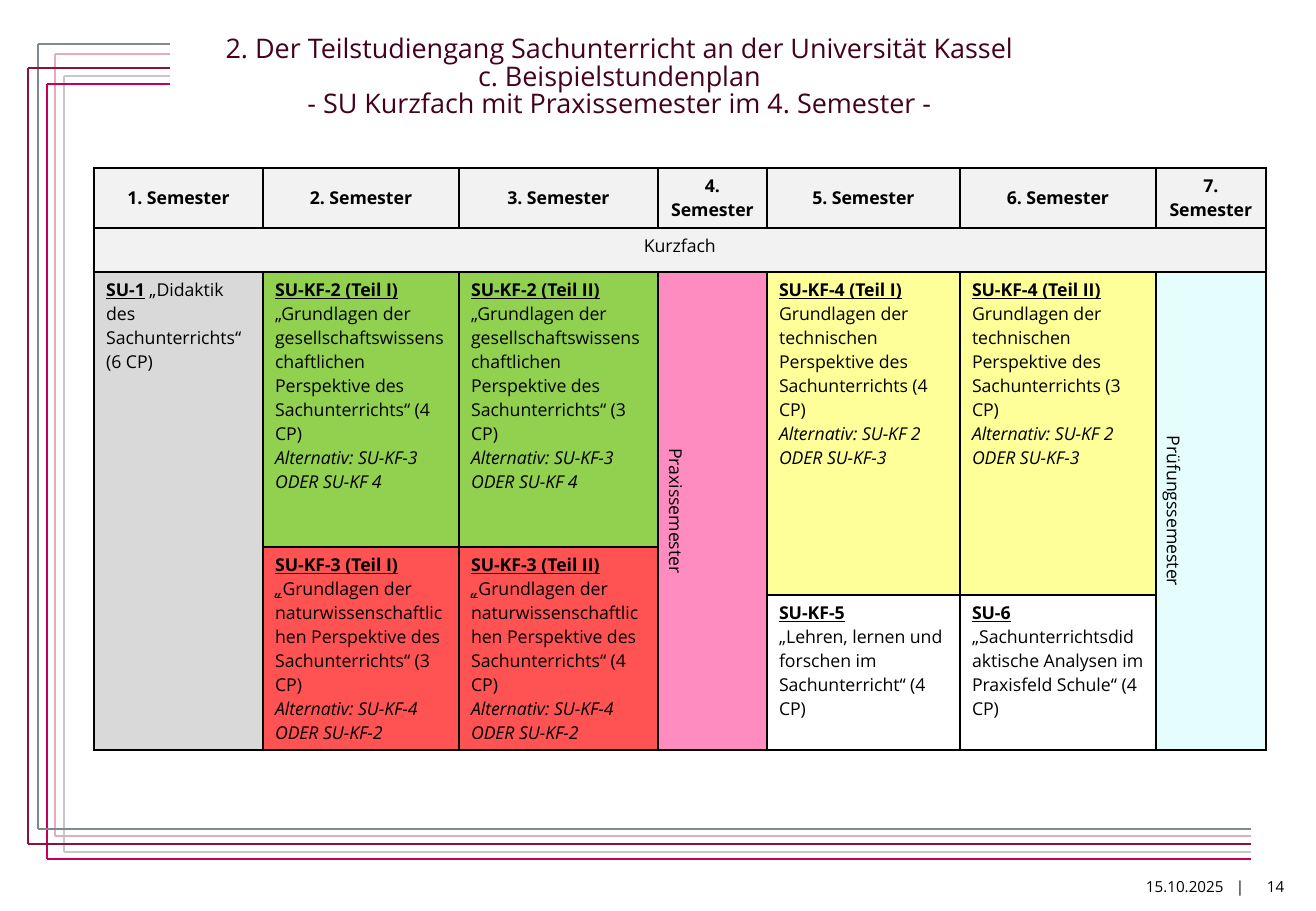
"""Build the sample timetable slide for the short subject."""
from dataclasses import dataclass
from typing import NamedTuple

from lxml.etree import SubElement
from pptx import Presentation
from pptx.dml.color import RGBColor
from pptx.enum.shapes import MSO_CONNECTOR
from pptx.enum.text import MSO_ANCHOR, PP_ALIGN
from pptx.oxml.ns import qn
from pptx.slide import Slide
from pptx.table import Table, _Cell
from pptx.text.text import Font, TextFrame, _Paragraph
from pptx.util import Emu, Pt

SCALE = 7526


@dataclass(frozen=True)
class Theme:
    """Colours, font and type sizes of the slide."""
    font: str = "Open Sans"
    ink: str = "000000"
    title: str = "45001F"
    head: str = "F2F2F2"
    base: str = "D9D9D9"
    social: str = "92D050"
    nature: str = "FF5353"
    tech: str = "FFFF99"
    plain: str = "FFFFFF"
    school: str = "FF8CC1"
    exam: str = "E6FDFE"
    big: float = 16
    body: float = 10.5
    small: float = 9
    rule: float = 1.25
    edge: float = 1


THEME = Theme()


class Run(NamedTuple):
    """Text with a style made of the letters b, i and u."""
    text: str
    style: str = ""


class Frame(NamedTuple):
    """One open line frame: colour, left, top and bottom."""
    color: str
    left: int
    top: int
    bottom: int


@dataclass(frozen=True)
class Entry:
    """One table cell with its place, fill, lines and span."""
    row: int
    col: int
    fill: str
    lines: tuple[tuple[Run, ...], ...]
    rows: int = 1
    cols: int = 1
    center: bool = False
    middle: bool = False
    turned: bool = False


FRAMES = (
    Frame("808992", 38, 44, 829),
    Frame("E6ABB6", 55, 54, 836),
    Frame("8B1141", 28, 68, 844),
    Frame("C5C7C8", 64, 76, 852),
    Frame("C5005A", 47, 84, 859),
)
TOP_END, BASE_END = 170, 1251
COLS = (169, 196, 199, 109, 193, 196, 110)
ROWS = (60, 44, 275, 48, 155)
TITLE = ("2. Der Teilstudiengang Sachunterricht an der Universität Kassel\n"
         "c. Beispielstundenplan\n"
         "- SU Kurzfach mit Praxissemester im 4. Semester -")


def px(size: int) -> Emu:
    """Turn pixels into EMU."""
    return Emu(size * SCALE)


def dress(font: Font, size: float, color: str = THEME.ink) -> None:
    """Set typeface, size and colour."""
    font.name, font.size = THEME.font, Pt(size)
    font.color.rgb = RGBColor.from_string(color)


def unit(head: str, body: str, alt: str = "", quote: str = "") -> tuple[tuple[Run, ...], ...]:
    """Make the lines of a module cell."""
    text = (Run(quote, "iu"), Run(body)) if quote else (Run(body),)
    lines = ((Run(head, "bu"),), text)
    return lines + ((Run(f"Alternativ: {alt}", "i"),),) if alt else lines


def pair(part: str, col: int, social: int, nature: int) -> tuple[Entry, Entry]:
    """Make the two stacked modules of semester two or three."""
    return (
        Entry(2, col, THEME.social, unit(
            f"SU-KF-2 ({part})",
            "„Grundlagen der gesellschaftswissenschaftlichen Perspektive des "
            f"Sachunterrichts“ ({social} CP)", "SU-KF-3 ODER SU-KF 4")),
        Entry(3, col, THEME.nature, unit(
            f"SU-KF-3 ({part})",
            "Grundlagen der naturwissenschaftlichen Perspektive des "
            f"Sachunterrichts“ ({nature} CP)", "SU-KF-4 ODER SU-KF-2", "„"), rows=2),
    )


def tech(part: str, col: int, points: int) -> Entry:
    """Make one part of the technical module."""
    return Entry(2, col, THEME.tech, unit(
        f"SU-KF-4 ({part})",
        f"Grundlagen der technischen Perspektive des Sachunterrichts ({points} CP)",
        "SU-KF 2 ODER SU-KF-3"), rows=2)


def tall(text: str, col: int, fill: str) -> Entry:
    """Make a full-height cell with turned text."""
    return Entry(2, col, fill, ((Run(text),),), rows=3, center=True, middle=True, turned=True)


ENTRIES = (
    *(Entry(0, col, THEME.head, ((Run(f"{col + 1}. Semester", "b"),),), center=True, middle=True)
      for col in range(len(COLS))),
    Entry(1, 0, THEME.head, ((Run("Kurzfach"),),), cols=len(COLS), center=True),
    Entry(2, 0, THEME.base, ((Run("SU-1", "bu"), Run(" „Didaktik des Sachunterrichts“ (6 CP)")),), rows=3),
    *pair("Teil I", 1, 4, 3),
    *pair("Teil II", 2, 3, 4),
    tall("Praxissemester", 3, THEME.school),
    tech("Teil I", 4, 4),
    tech("Teil II", 5, 3),
    tall("Prüfungssemester", 6, THEME.exam),
    Entry(4, 4, THEME.plain, unit("SU-KF-5", "„Lehren, lernen und forschen im Sachunterricht“ (4 CP)")),
    Entry(4, 5, THEME.plain, unit("SU-6", "„Sachunterrichtsdidaktische Analysen im Praxisfeld Schule“ (4 CP)")),
)


def draw_line(slide: Slide, color: str, x1: int, y1: int, x2: int, y2: int) -> None:
    """Draw one straight rule."""
    line = slide.shapes.add_connector(MSO_CONNECTOR.STRAIGHT, px(x1), px(y1), px(x2), px(y2))
    line.line.color.rgb = RGBColor.from_string(color)
    line.line.width = Pt(THEME.rule)
    SubElement(line._element.spPr, qn("a:effectLst"))


def draw_text(slide: Slide, x: int, y: int, w: int, h: int) -> TextFrame:
    """Add a wrapping text box."""
    frame = slide.shapes.add_textbox(px(x), px(y), px(w), px(h)).text_frame
    frame.word_wrap = True
    return frame


def add_edges(cell: _Cell) -> None:
    """Give a cell its four borders."""
    props = cell._tc.get_or_add_tcPr()
    for side in ("lnL", "lnR", "lnT", "lnB"):
        line = SubElement(props, qn(f"a:{side}"), w=str(Pt(THEME.edge)))
        fill = SubElement(line, qn("a:solidFill"))
        SubElement(fill, qn("a:srgbClr"), val=THEME.ink)


def write_line(para: _Paragraph, runs: tuple[Run, ...]) -> None:
    """Write the runs of one paragraph."""
    dress(para.font, THEME.body)
    for part in runs:
        run = para.add_run()
        run.text = part.text
        font = para.font if len(runs) == 1 else run.font
        font.bold, font.italic, font.underline = (key in part.style for key in "biu")


def fill_cell(table: Table, entry: Entry) -> None:
    """Merge, colour and write one cell."""
    cell = table.cell(entry.row, entry.col)
    if entry.rows * entry.cols > 1:
        cell.merge(table.cell(entry.row + entry.rows - 1, entry.col + entry.cols - 1))
    cell.fill.solid()
    cell.fill.fore_color.rgb = RGBColor.from_string(entry.fill)
    cell.vertical_anchor = MSO_ANCHOR.MIDDLE if entry.middle else MSO_ANCHOR.TOP
    if entry.turned:
        cell._tc.get_or_add_tcPr().set("vert", "vert")
    for index, runs in enumerate(entry.lines):
        para = cell.text_frame.add_paragraph() if index else cell.text_frame.paragraphs[0]
        para.alignment = PP_ALIGN.CENTER if entry.center else PP_ALIGN.LEFT
        write_line(para, runs)


def draw_plan(slide: Slide) -> None:
    """Draw the timetable."""
    table = slide.shapes.add_table(
        len(ROWS), len(COLS), px(94), px(168), px(sum(COLS)), px(sum(ROWS))).table
    table.first_row = table.horz_banding = False
    for col, width in zip(table.columns, COLS):
        col.width = px(width)
    for row, height in zip(table.rows, ROWS):
        row.height = px(height)
    for cell in table.iter_cells():
        add_edges(cell)
    for entry in ENTRIES:
        fill_cell(table, entry)


def draw_notes(slide: Slide) -> None:
    """Draw the title, date and page number."""
    para = draw_text(slide, 170, 31, 899, 114).paragraphs[0]
    para.text, para.alignment, para.line_spacing = TITLE, PP_ALIGN.CENTER, 0.85
    dress(para.font, THEME.big, THEME.title)
    date = draw_text(slide, 1134, 874, 125, 22)
    date.vertical_anchor = MSO_ANCHOR.BOTTOM
    date.margin_top = date.margin_bottom = 0
    date.margin_right = px(5)
    para = date.paragraphs[0]
    tabs = SubElement(para._p.get_or_add_pPr(), qn("a:tabLst"))
    SubElement(tabs, qn("a:tab"), pos=str(px(90)), algn="l")
    para.text = "15.10.2025\t|"
    dress(para.font, THEME.small)
    para = draw_text(slide, 1255, 871, 60, 24).paragraphs[0]
    para.text = "14"
    dress(para.font, THEME.small)


def main() -> None:
    """Build and save the deck."""
    deck = Presentation()
    deck.slide_width, deck.slide_height = px(1316), px(911)
    slide = deck.slides.add_slide(deck.slide_layouts[6])
    for color, left, top, base in FRAMES:
        draw_line(slide, color, left, top, TOP_END, top)
        draw_line(slide, color, left, top, left, base)
    for color, left, _, base in FRAMES:
        draw_line(slide, color, left, base, BASE_END, base)
    draw_notes(slide)
    draw_plan(slide)
    deck.save("out.pptx")


if __name__ == "__main__":
    main()
